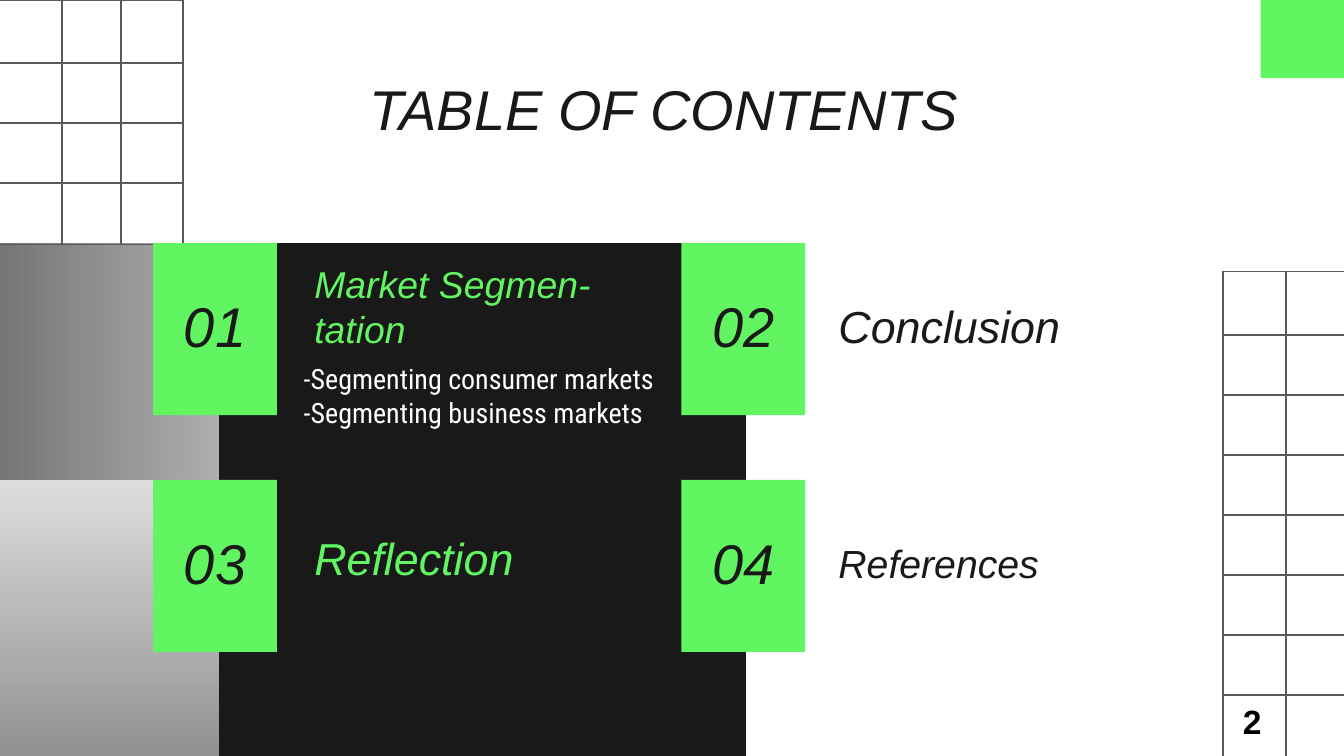
import pptx
import pptx.dml.color
import pptx.enum.shapes
import pptx.enum.text
import pptx.oxml.ns
import pptx.util

COLOURS = {
    "green": "61F561", "ink": "191919", "line": "595959", "white": "FFFFFF", "black": "000000",
    "steel": "737373", "silver": "BFBFBF", "mist": "DDDDDD", "grey": "919191",
}
ANCHOR = pptx.enum.text.MSO_ANCHOR
ALIGN = pptx.enum.text.PP_ALIGN
WIDTH = 10
HEIGHT = WIDTH * 9 / 16
CARD_COLUMNS, CARD_ROWS = (1.14, 5.07), (1.81, 3.57)
CARD_WIDTH, CARD_HEIGHT = 0.92, 1.28
PITCH = 1.34 / 3  # spacing of the decorative grid lines

HEADING = {"name": "Arial", "italic": True, "bold": False}
NUMBER = {**HEADING, "size": pptx.util.Pt(30)}
DETAIL = {"name": "Roboto Condensed", "size": pptx.util.Pt(15)}
PAGE_NUMBER = {"name": "Arial", "size": pptx.util.Pt(18), "bold": True}


def inches(*lengths):
    return [pptx.util.Inches(length) for length in lengths]


def rgb(name):
    return pptx.dml.color.RGBColor.from_string(COLOURS[name])


def add_block(page, place, fill=None, gradient=None, angle=0):
    """Add a rectangle: filled, shaded between two colours, or only outlined."""
    block = page.shapes.add_shape(pptx.enum.shapes.MSO_SHAPE.RECTANGLE, *inches(*place))
    block.shadow.inherit = False
    if gradient:
        block.fill.gradient()
        block.fill.gradient_angle = angle
        for stop, name in zip(block.fill.gradient_stops, gradient):
            stop.color.rgb = rgb(name)
    elif fill:
        block.fill.solid()
        block.fill.fore_color.rgb = rgb(fill)
    else:
        block.fill.background()
        block.line.color.rgb = rgb("line")
        block.line.width = pptx.util.Pt(1)
        return
    block.line.fill.background()


def add_rule(page, *ends):
    rule = page.shapes.add_connector(pptx.enum.shapes.MSO_CONNECTOR.STRAIGHT, *inches(*ends))
    rule.line.color.rgb = rgb("line")
    rule.line.width = pptx.util.Pt(1)
    properties = rule._element.spPr
    properties.append(properties.makeelement(pptx.oxml.ns.qn("a:effectLst"), {}))


def add_grid(page, place, columns, first_row, row_count):
    left, top, width, height = place
    add_block(page, place)
    for x in columns:
        add_rule(page, x, top, x, top + height)
    for row in range(row_count):
        y = first_row + row * PITCH
        add_rule(page, left, y, left + width, y)


def write_text(box, lines, font, colour, align=ALIGN.LEFT, anchor=ANCHOR.MIDDLE,
               right=0.1, top=0.1):
    frame = box.text_frame
    frame.text = "\n".join(lines)
    margins = {"left": 0.1, "top": top, "right": right, "bottom": top}
    settings = {f"margin_{side}": pptx.util.Inches(gap) for side, gap in margins.items()}
    settings.update(word_wrap=True, vertical_anchor=anchor,
                    auto_size=pptx.enum.text.MSO_AUTO_SIZE.NONE)
    for name, value in settings.items():
        setattr(frame, name, value)
    for para in frame.paragraphs:
        para.alignment = align
        para.space_before = pptx.util.Pt(0)
        for span in para.runs:
            for name, value in font.items():
                setattr(span.font, name, value)
            span.font.color.rgb = rgb(colour)


def add_text(page, place, *content, **layout):
    write_text(page.shapes.add_textbox(*inches(*place)), *content, **layout)


def fill_placeholder(box, place, *content, **layout):
    """Move a placeholder to its place, in front of the blocks, and write in it."""
    for name, value in zip(("left", "top", "width", "height"), inches(*place)):
        setattr(box, name, value)
    box._element.getparent().append(box._element)
    write_text(box, *content, **layout)


def remove_bullets(box):
    for para in box.text_frame.paragraphs:
        properties = para._p.get_or_add_pPr()
        properties.set("marL", "0")
        properties.set("indent", "0")
        properties.append(properties.makeelement(pptx.oxml.ns.qn("a:buNone"), {}))


def add_background(page):
    add_block(page, (-0.08, 1.81, 2.2, 2), gradient=("steel", "silver"))
    add_block(page, (-0.08, 3.57, 2.21, 2.06), gradient=("mist", "grey"), angle=270)
    add_block(page, (1.63, 1.81, 3.92, HEIGHT - 1.81), "ink")
    add_block(page, (WIDTH - 0.62, 0, 0.62, 0.58), "green")
    add_grid(page, (9.1, 2.02, 1.37, 4.95), (9.57,), 2.49, 7)
    add_grid(page, (-0.01, 0, 1.37, 1.82), (0.46, 0.9), 0.47, 3)


def add_cards(page):
    corners = [(left, top) for top in CARD_ROWS for left in CARD_COLUMNS]
    for number, (left, top) in enumerate(corners, 1):
        add_block(page, (left, top, CARD_WIDTH, CARD_HEIGHT), "green")
        add_text(page, (left, top + 0.31, CARD_WIDTH, 0.65), [f"{number:02}"], NUMBER, "ink",
                 align=ALIGN.CENTER, anchor=ANCHOR.BOTTOM)


def add_headings(page):
    headings = [
        ("Market Segmen-tation", (2.24, 1.91, 2.72, 0.73), 20, "green", 0.1),
        ("Conclusion", (6.14, 2.28, 2.6, 0.29), 24, "ink", 0),
        ("Reflection", (2.24, 4, 2.6, 0.29), 24, "green", 0.1),
        ("References", (6.14, 4.04, 2.6, 0.29), 21, "ink", 0.1),
    ]
    for words, place, size, colour, right in headings:
        font = {**HEADING, "size": pptx.util.Pt(size)}
        add_text(page, place, [words], font, colour, right=right)


def main():
    deck = pptx.Presentation()
    deck.slide_width, deck.slide_height = inches(WIDTH, HEIGHT)
    page = deck.slides.add_slide(deck.slide_layouts[1])
    title, details = page.placeholders
    add_background(page)
    add_cards(page)
    add_headings(page)
    fill_placeholder(details, (2.16, 2.59, 2.81, 0.77),
                     ["-Segmenting consumer markets", "-Segmenting business markets"],
                     DETAIL, "white", anchor=ANCHOR.TOP)
    remove_bullets(details)
    fill_placeholder(title, (2.26, 0.49, 5.48, 0.63), ["TABLE OF CONTENTS "], NUMBER, "ink",
                     align=ALIGN.CENTER)
    add_text(page, (9.15, 5.17, 0.53, 0.4), ["2"], PAGE_NUMBER, "black", anchor=ANCHOR.TOP,
             top=0.05)
    deck.save("out.pptx")


if __name__ == "__main__":
    main()
